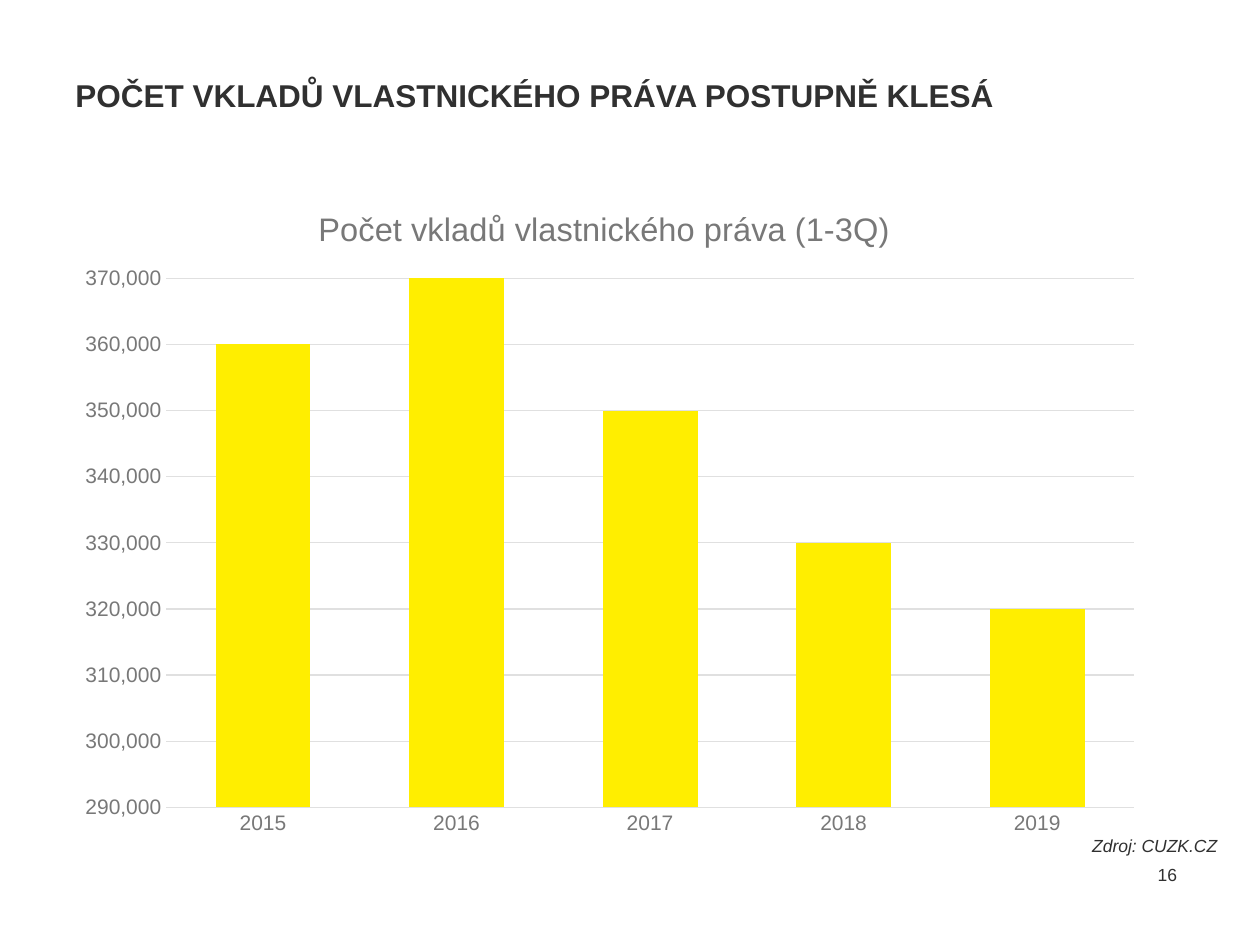
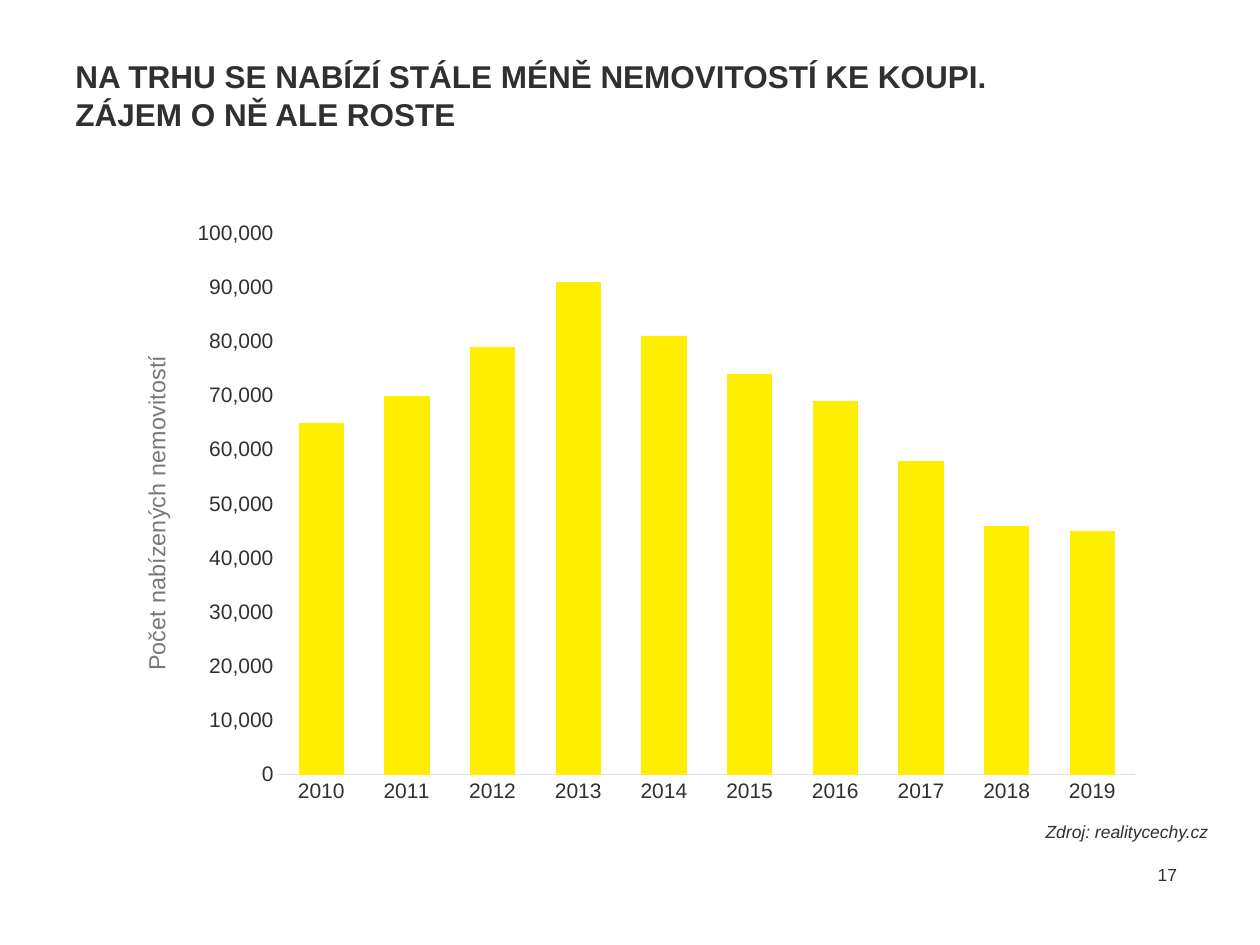
from pptx import Presentation
from pptx.chart.data import CategoryChartData
from pptx.dml.color import RGBColor
from pptx.enum.chart import XL_CHART_TYPE, XL_TICK_MARK
from pptx.enum.text import MSO_ANCHOR, PP_ALIGN
from pptx.oxml import parse_xml
from pptx.oxml.ns import nsdecls, qn
from pptx.util import Inches, Pt

INK = RGBColor(0x30, 0x30, 0x30)
GREY = RGBColor(0x78, 0x78, 0x78)
RULE = RGBColor(0xE0, 0xE0, 0xE0)
YELLOW = RGBColor(0xFF, 0xEE, 0x00)
WHITE = RGBColor(0xFF, 0xFF, 0xFF)
FONT = "Arial"

TITLE_BOX = (0.5, 0.44, 7.65, 0.63)
NUMBER_BOX = (8.96, 6.74, 0.48, 0.4)

# Boxes are (left, top, width, height) in inches on the slide
SLIDES = [
    {
        "title": "POČET VKLADŮ VLASTNICKÉHO PRÁVA POSTUPNĚ KLESÁ",
        "number": "16",
        "source": ("Zdroj: CUZK.CZ", (8.57, 6.58, 1.21, 0.27)),
        "chart": {
            "box": (0.5, 1.47, 8.67, 5.27),
            "plot_box": (1.32, 2.21, 7.68, 4.2),
            "first_year": 2015,
            "values": [360000, 370000, 350000, 330000, 320000],
            "scale": (290000, 370000),
            "label_color": GREY,
            "gap": 104,
            "gridlines": True,
            "chart_title": ("Počet vkladů vlastnického práva (1-3Q)", (2.48, 1.6)),
        },
    },
    {
        "title": "NA TRHU SE NABÍZÍ STÁLE MÉNĚ NEMOVITOSTÍ KE KOUPI. ZÁJEM O NĚ ALE ROSTE",
        "number": "17",
        "source": ("Zdroj: realitycechy.cz", (8.2, 6.47, 1.51, 0.27)),
        "chart": {
            "box": (0.91, 1.67, 8.27, 4.8),
            "plot_box": (2.21, 1.85, 6.8, 4.3),
            "first_year": 2010,
            "values": [65000, 70000, 79000, 91000, 81000,
                       74000, 69000, 58000, 46000, 45000],
            "scale": (0, 100000),
            "label_color": INK,
            "gap": 89,
            "axis_title": ("Počet nabízených nemovitostí", (1.09, 2.79)),
        },
    },
]


def set_font(font, size, color=INK, **extra):
    formats = {"name": FONT, "size": Pt(size), **extra}
    for name, value in formats.items():
        setattr(font, name, value)
    font.color.rgb = color


def add_text(slide, box, text, size, anchor=MSO_ANCHOR.MIDDLE,
             align=PP_ALIGN.LEFT, wrap=True, **extra):
    frame = slide.shapes.add_textbox(*map(Inches, box)).text_frame
    formats = {"word_wrap": wrap, "vertical_anchor": anchor, "text": text}
    for name, value in formats.items():
        setattr(frame, name, value)
    paragraph = frame.paragraphs[0]
    paragraph.alignment = align
    set_font(paragraph.runs[0].font, size, **extra)


def place(element, index, chart_box, target, inner=False):
    """Fix a chart part at a slide position, as fractions of the chart box."""
    for layout in element.findall(qn("c:layout")):
        element.remove(layout)
    left, top, width, height = chart_box
    settings = [("xMode", "edge"), ("yMode", "edge"),
                ("x", (target[0] - left) / width),
                ("y", (target[1] - top) / height)]
    if inner:
        settings.insert(0, ("layoutTarget", "inner"))
        settings += [("w", target[2] / width), ("h", target[3] / height)]
    parts = "".join(f'<c:{tag} val="{value}"/>' for tag, value in settings)
    element.insert(index, parse_xml(
        f'<c:layout {nsdecls("c")}><c:manualLayout>{parts}</c:manualLayout></c:layout>'))


def add_title(title, chart_box, text, position, size):
    title.text_frame.text = text
    run = title.text_frame.paragraphs[0].runs[0]
    set_font(run.font, size, GREY, bold=False)
    place(title._element, 1, chart_box, position)


def add_column_chart(slide, box, plot_box, first_year, values, scale, label_color,
                     gap, gridlines=False, chart_title=None, axis_title=None):
    data = CategoryChartData(number_format="#,##0")
    data.categories = [str(first_year + i) for i in range(len(values))]
    data.add_series("Series 1", values)
    chart = slide.shapes.add_chart(
        XL_CHART_TYPE.COLUMN_CLUSTERED, *map(Inches, box), data).chart
    set_font(chart.font, 10)
    chart.has_legend = False

    # Columns
    plot = chart.plots[0]
    for name, value in {"gap_width": gap, "overlap": -27,
                        "vary_by_categories": False}.items():
        setattr(plot, name, value)
    fill = plot.series[0].format.fill
    fill.solid()
    fill.fore_color.rgb = YELLOW
    place(chart._chartSpace.xpath("c:chart/c:plotArea")[0], 0, box, plot_box, inner=True)

    # Axes
    category_axis, value_axis = chart.category_axis, chart.value_axis
    for axis in (category_axis, value_axis):
        axis.major_tick_mark = axis.minor_tick_mark = XL_TICK_MARK.NONE
        set_font(axis.tick_labels.font, 12, label_color)
    lines = [category_axis.format.line]
    value_axis.format.line.fill.background()
    value_axis.minimum_scale, value_axis.maximum_scale = scale
    value_axis.major_unit = 10000
    value_axis.tick_labels.number_format = "#,##0"
    value_axis.tick_labels.number_format_is_linked = False
    value_axis.has_major_gridlines = gridlines
    if gridlines:
        lines.append(value_axis.major_gridlines.format.line)
    for line in lines:
        line.color.rgb = RULE
        line.width = Pt(0.75)

    # Titles
    chart.has_title = bool(chart_title)
    if chart_title:
        add_title(chart.chart_title, box, *chart_title, size=18.6)
    if axis_title:
        add_title(value_axis.axis_title, box, *axis_title, size=13.3)


def add_chart_slide(presentation, content):
    slide = presentation.slides.add_slide(presentation.slide_layouts[6])
    slide.background.fill.solid()
    slide.background.fill.fore_color.rgb = WHITE
    add_text(slide, TITLE_BOX, content["title"], 18, bold=True)
    add_column_chart(slide, **content["chart"])
    # Footer: page number and source
    add_text(slide, NUMBER_BOX, content["number"], 10, align=PP_ALIGN.RIGHT)
    source, source_box = content["source"]
    add_text(slide, source_box, source, 10, MSO_ANCHOR.TOP, wrap=False, italic=True)


def main():
    presentation = Presentation()
    presentation.slide_width, presentation.slide_height = Inches(10), Inches(7.5)
    for content in SLIDES:
        add_chart_slide(presentation, content)
    presentation.save("out.pptx")


if __name__ == "__main__":
    main()
